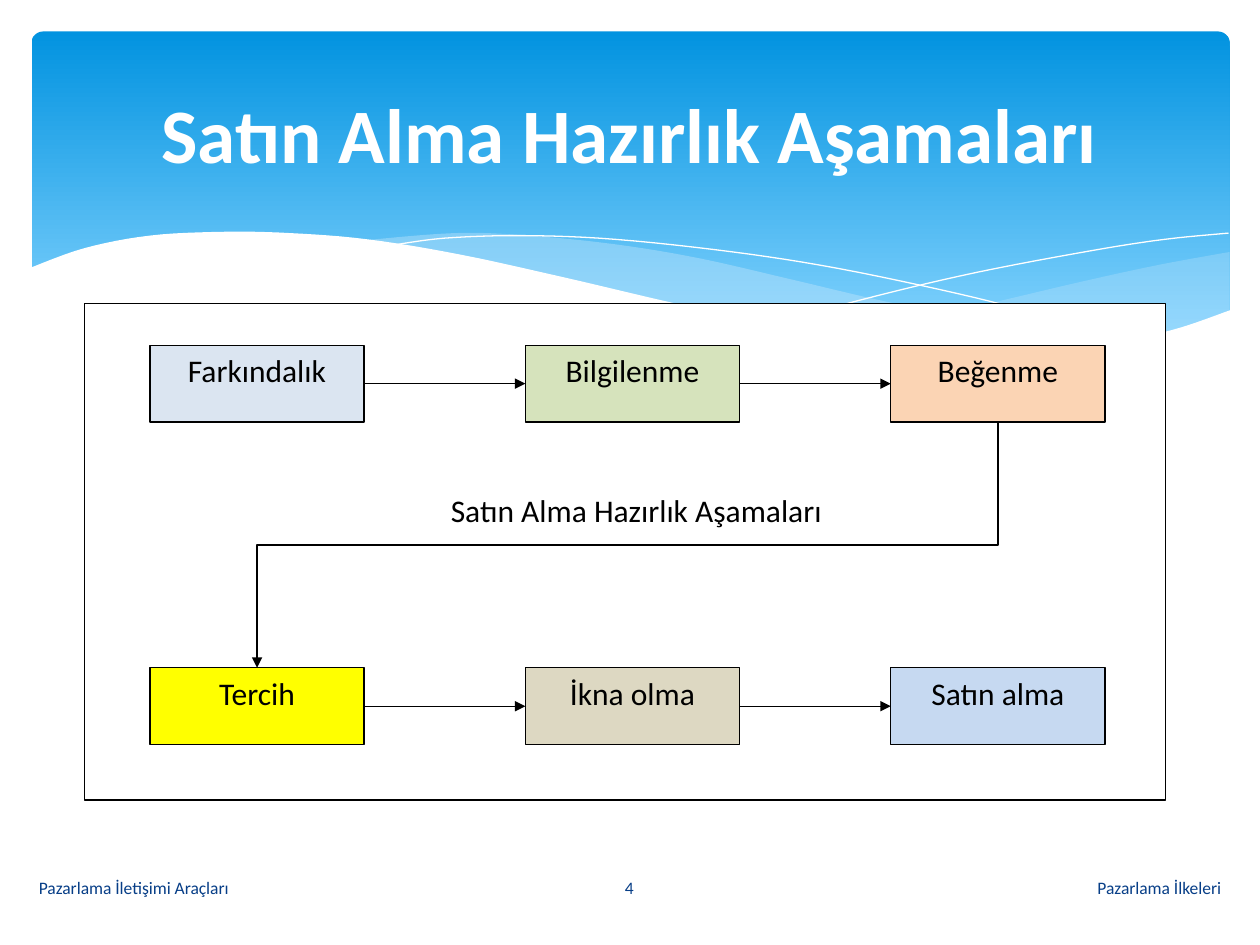
import pptx
import pptx.util
import pptx.dml.color
import pptx.enum.shapes
import pptx.enum.text
import pptx.oxml.ns
from dataclasses import dataclass
from lxml import etree

Inches = pptx.util.Inches
Pt = pptx.util.Pt
RGB = pptx.dml.color.RGBColor
Align = pptx.enum.text.PP_ALIGN
Anchor = pptx.enum.text.MSO_ANCHOR
Form = pptx.enum.shapes.MSO_SHAPE
Link = pptx.enum.shapes.MSO_CONNECTOR
qn = pptx.oxml.ns.qn

WHITE = RGB(0xFF, 0xFF, 0xFF)
BLACK = RGB(0, 0, 0)
NAVY = RGB(0x07, 0x3E, 0x87)
SKY = RGB(0x02, 0x93, 0xE0)
PALE = RGB(0x83, 0xD3, 0xFE)
MIST = RGB(0xC6, 0xE7, 0xFC)
FONT = "Calibri"
TITLE = "Satın Alma Hazırlık Aşamaları"

COLS = (1.19, 4.17, 7.07)
ROWS = (2.74, 5.3)
WIDE, HIGH = 1.7, 0.61


@dataclass
class Stage:
    text: str
    fill: RGB


@dataclass
class Note:
    text: str
    left: float
    width: float
    align: Align


STAGES = (
    (Stage("Farkındalık", RGB(0xDB, 0xE5, 0xF1)),
     Stage("Bilgilenme", RGB(0xD6, 0xE3, 0xBC)),
     Stage("Beğenme", RGB(0xFB, 0xD4, 0xB4))),
    (Stage("Tercih", RGB(0xFF, 0xFF, 0)),
     Stage("İkna olma", RGB(0xDD, 0xD8, 0xC2)),
     Stage("Satın alma", RGB(0xC6, 0xD9, 0xF1))),
)
NOTES = (
    Note("Pazarlama İlkeleri", 5.65, 4.14, Align.RIGHT),
    Note("Pazarlama İletişimi Araçları", 0.21, 4.14, Align.LEFT),
    Note("4", 4.36, 1.27, Align.CENTER),
)


def curve(*knots: tuple, steps: int = 6) -> list:
    """Points of a smooth (Catmull-Rom) curve through the knots."""
    ends = [knots[0], *knots, knots[-1]]
    points = [knots[0]]
    for a, b, c, d in zip(ends, ends[1:], ends[2:], ends[3:]):
        for step in range(1, steps + 1):
            t = step / steps
            points.append(tuple(
                (2 * q + (r - p) * t + (2 * p - 5 * q + 4 * r - s) * t ** 2
                 + (3 * q - p - 3 * r + s) * t ** 3) / 2
                for p, q, r, s in zip(a, b, c, d)))
    return points


def trace(slide, points: list, closed: bool):
    spots = [(Inches(x), Inches(y)) for x, y in points]
    pen = slide.shapes.build_freeform(*spots[0], scale=1.0)
    pen.add_line_segments(spots[1:], close=closed)
    shape = pen.convert_to_shape()
    shape.shadow.inherit = False
    return shape


def wave(slide, points: list, color: RGB, alpha: int = 100) -> None:
    shape = trace(slide, points, True)
    shape.fill.solid()
    shape.fill.fore_color.rgb = color
    shape.line.fill.background()
    if alpha < 100:
        tint = shape.element.spPr.find(".//" + qn("a:srgbClr"))
        etree.SubElement(tint, qn("a:alpha")).set("val", str(alpha * 1000))


def strand(slide, points: list) -> None:
    shape = trace(slide, points, False)
    shape.fill.background()
    shape.line.color.rgb = WHITE
    shape.line.width = Pt(0)


def write(shape, text: str, size: int, color: RGB, align: Align, anchor: Anchor) -> None:
    frame = shape.text_frame
    frame.word_wrap = True
    frame.vertical_anchor = anchor
    frame.text = text
    line = frame.paragraphs[0]
    line.alignment = align
    line.font.name = FONT
    line.font.size = Pt(size)
    line.font.color.rgb = color


def box(slide, left: float, top: float, width: float, height: float, fill: RGB):
    shape = slide.shapes.add_shape(
        Form.RECTANGLE, Inches(left), Inches(top), Inches(width), Inches(height))
    shape.shadow.inherit = False
    shape.fill.solid()
    shape.fill.fore_color.rgb = fill
    shape.line.color.rgb = BLACK
    shape.line.width = Pt(0.75)
    return shape


def label(slide, left: float, top: float, width: float, height: float):
    return slide.shapes.add_textbox(
        Inches(left), Inches(top), Inches(width), Inches(height))


def arrow(slide, kind: Link, x1: float, y1: float, x2: float, y2: float):
    link = slide.shapes.add_connector(kind, Inches(x1), Inches(y1), Inches(x2), Inches(y2))
    link.line.color.rgb = BLACK
    link.line.width = Pt(0.75)
    props = link.element.spPr
    etree.SubElement(props.find(qn("a:ln")), qn("a:tailEnd")).set("type", "triangle")
    etree.SubElement(props, qn("a:effectLst"))
    return link


def banner(slide) -> None:
    band = slide.shapes.add_shape(
        Form.ROUNDED_RECTANGLE, Inches(0.25), Inches(0.25), Inches(9.51), Inches(2.7))
    band.adjustments[0] = 0.034
    band.shadow.inherit = False
    band.line.fill.background()
    band.fill.gradient()
    band.fill.gradient_angle = 270
    for stop, color, place in zip(band.fill.gradient_stops, (SKY, PALE), (0, 0.9)):
        stop.color.rgb = color
        stop.position = place

    # Translucent waves
    wave(slide, curve((9.76, 2), (9.21, 2.1), (8.61, 2.23), (7.53, 2.48), (6.61, 2.65))
         + curve((6.61, 2.65), (7.19, 2.72), (7.69, 2.77), (8.14, 2.78), (8.63, 2.75),
                 (9.13, 2.67), (9.49, 2.57), (9.76, 2.47)), MIST, 29)
    wave(slide, curve((8.93, 2.73), (8.07, 2.6), (7.06, 2.4), (6.29, 2.22), (5.55, 2.05),
                      (4.89, 1.94), (4.2, 1.87), (3.61, 1.85), (2.86, 1.91))
         + curve((2.86, 1.91), (3.62, 2.03), (4.49, 2.22), (5.3, 2.4), (6.18, 2.58),
                 (6.95, 2.7), (7.61, 2.77), (8.18, 2.78), (8.93, 2.73)), MIST, 40)

    # Thin strands
    strand(slide, curve((3.09, 1.95), (3.53, 1.89), (4.16, 1.87), (4.89, 1.9), (5.82, 2),
                        (6.65, 2.13), (7.6, 2.33), (8.31, 2.51), (9.07, 2.72)))
    strand(slide, curve((6.13, 2.57), (6.95, 2.35), (7.76, 2.16), (8.66, 1.99),
                        (9.24, 1.9), (9.75, 1.85)))

    # White wave closing the band
    wave(slide, curve((9.77, 2.46), (9.3, 2.62), (8.75, 2.73), (8.09, 2.77), (7.26, 2.72),
                      (6.48, 2.62), (5.55, 2.45), (4.47, 2.2), (3.65, 2.02), (2.92, 1.9),
                      (2.3, 1.85), (1.77, 1.84), (1.19, 1.87), (0.67, 1.97), (0.23, 2.13))
         + [(0.23, 3.29), (9.77, 3.29)], WHITE)


def flow(slide) -> None:
    box(slide, 0.67, 2.41, 8.58, 3.94, WHITE)
    for top, row in zip(ROWS, STAGES):
        for left, stage in zip(COLS, row):
            shape = box(slide, left, top, WIDE, HIGH, stage.fill)
            write(shape, stage.text, 18, BLACK, Align.CENTER, Anchor.TOP)
        mid = top + HIGH / 2
        for left, right in zip(COLS, COLS[1:]):
            arrow(slide, Link.STRAIGHT, left + WIDE, mid, right, mid)

    # Elbow between the rows: laid out sideways, then turned by 90 degrees
    x = (COLS[0] + COLS[-1] + WIDE) / 2
    y = (ROWS[0] + HIGH + ROWS[1]) / 2
    run = (COLS[-1] - COLS[0]) / 2
    drop = (ROWS[1] - ROWS[0] - HIGH) / 2
    elbow = arrow(slide, Link.ELBOW, x - drop, y - run, x + drop, y + run)
    elbow.element.spPr.find(qn("a:xfrm")).set("rot", str(90 * 60000))

    write(label(slide, 3.04, 3.85, 4.02, HIGH), TITLE, 18, BLACK, Align.CENTER, Anchor.TOP)


def main() -> None:
    deck = pptx.Presentation()
    deck.slide_width, deck.slide_height = Inches(10), Inches(7.5)
    slide = deck.slides.add_slide(deck.slide_layouts[5])
    banner(slide)

    # Title, raised above the banner
    title = slide.shapes.title
    title.left, title.top = Inches(0.5), Inches(0.37)
    title.width, title.height = Inches(9), Inches(1.37)
    write(title, TITLE, 44, WHITE, Align.CENTER, Anchor.MIDDLE)
    title.text_frame.paragraphs[0].font.bold = True
    slide.shapes.element.append(title.element)

    # Footer
    for note in NOTES:
        shape = label(slide, note.left, 6.84, note.width, 0.4)
        write(shape, note.text, 10, NAVY, note.align, Anchor.MIDDLE)

    flow(slide)
    deck.save("out.pptx")


if __name__ == "__main__":
    main()
